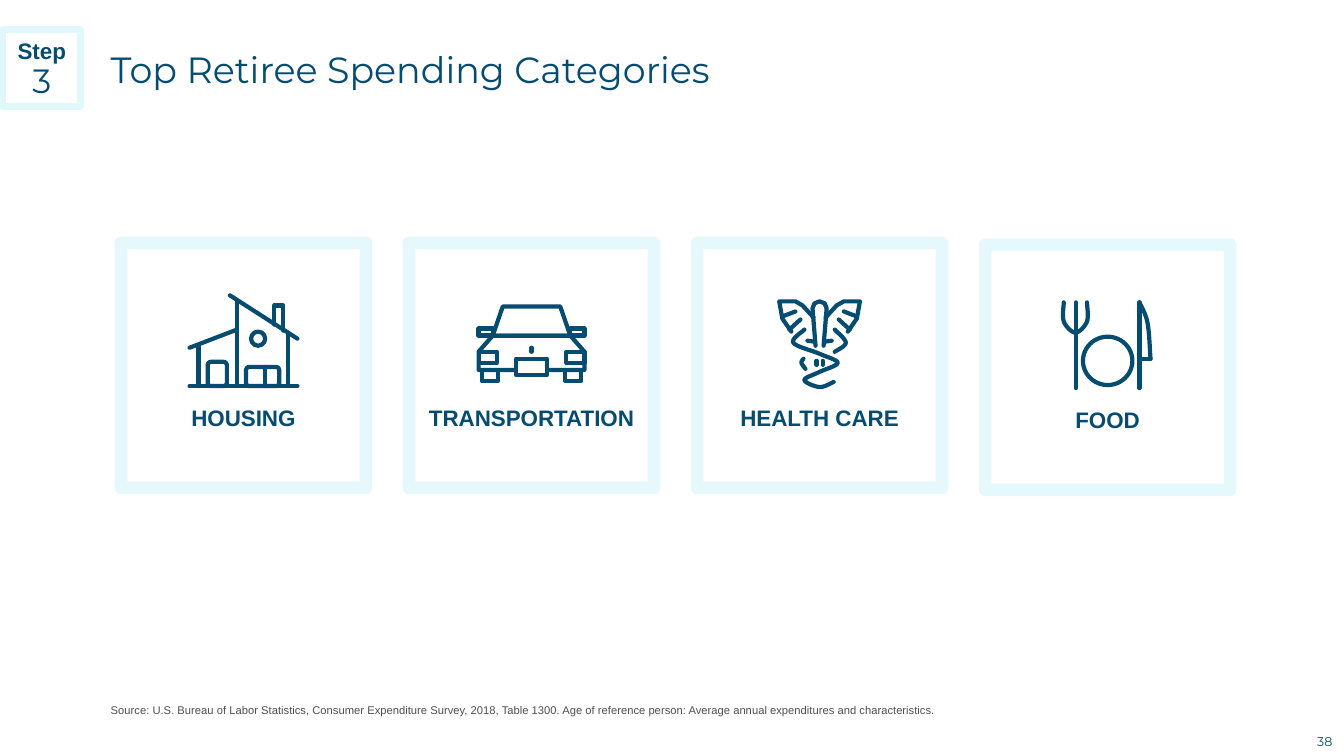
import lxml.etree
import pptx
import pptx.dml.color
import pptx.enum.shapes
import pptx.enum.text
import pptx.oxml.ns
import pptx.util

THEME = {
    "navy": "054C70", "cyan": "05C3DE", "pale": "E1F8FB", "white": "FFFFFF", "grey": "4F4F4F",
    "heading": "Montserrat", "body": "Arial",
    "title": 26, "step": 24, "label": 16, "number": 9, "source": 8,
    "stroke": 3, "frame": 9, "badge": 5,
}
GRID = pptx.util.Inches(0.01)  # one grid cell; all lengths below count cells
WIDTH, HEIGHT = 1333, 750
CARD, PITCH, CARDS_LEFT, CARDS_TOP = 243, 285.7, 120, 241
LABEL_DROP, LABEL_HEIGHT = 155, 37
BASE = 142  # where every icon stands, below the top of its card
CURVE_STEPS = 10

SHAPES = pptx.enum.shapes.MSO_SHAPE
ALIGN = pptx.enum.text.PP_ALIGN
ANCHOR = pptx.enum.text.MSO_ANCHOR
qn = pptx.oxml.ns.qn


def outline(shape, color, width):
    """Give a shape or connector a plain line with no shadow, and return the line element."""
    shape.line.color.rgb = pptx.dml.color.RGBColor.from_string(THEME[color])
    shape.line.width = pptx.util.Pt(THEME[width])
    properties = shape._element.spPr
    if properties.find(qn("a:effectLst")) is None:
        lxml.etree.SubElement(properties, qn("a:effectLst"))
    return properties.find(qn("a:ln"))


def write(shape, lines, insets, anchor, align):
    """Fill a shape with one paragraph per (text, font, size, bold, color)."""
    frame = shape.text_frame
    frame.word_wrap = True
    frame.vertical_anchor = anchor
    frame.margin_left, frame.margin_top, frame.margin_right, frame.margin_bottom = (
        inset * GRID for inset in insets)
    for index, (text, font, size, bold, color) in enumerate(lines):
        paragraph = frame.add_paragraph() if index else frame.paragraphs[0]
        paragraph.alignment = align
        run = paragraph.add_run()
        run.text = text
        run.font.name = THEME[font]
        run.font.size = pptx.util.Pt(THEME[size])
        run.font.bold = bold
        run.font.color.rgb = pptx.dml.color.RGBColor.from_string(THEME[color])
    return frame.paragraphs


# Icon strokes, measured from the top centre of their card.
# posts: (x, top) of uprights on the base; lines: polylines; curves: smooth through their points;
# pairs: polylines drawn on both sides; halves: polylines continued by their reflection.
ICONS = {
    "HOUSING": {
        "posts": [(-44.5, 101), (-6.5, 57), (21.5, 123), (44.5, 89)],
        "lines": [
            [(-53.5, BASE), (53.5, BASE)],
            [(-53.5, 104), (-6.5, 86)],
            [(-13.5, 52), (53.5, 95)],
            [(30.5, 81), (30.5, 62), (39.5, 62), (39.5, 87)],
        ],
        "shapes": [
            (SHAPES.ROUNDED_RECTANGLE, 2.5, 123, 33, 19),
            (SHAPES.ROUNDED_RECTANGLE, -35.5, 118, 19, 24),
            (SHAPES.OVAL, 7.5, 88, 14, 14),
        ],
    },
    "TRANSPORTATION": {
        "lines": [[(0, 104), (0, 108)]],
        "halves": [
            [(15.5, 126), (52.5, 126), (52.5, 108), (38.5, 92)],
            [(0, 63), (28.5, 63), (38.5, 92)],
        ],
        "shapes": [(SHAPES.RECTANGLE, -15.5, 115, 31, 16)],
        "paired shapes": [
            (SHAPES.RECTANGLE, -49.5, 126, 16, 11),
            (SHAPES.RECTANGLE, -52.5, 85, 14, 7),
            (SHAPES.RECTANGLE, -52.5, 108, 18, 11),
        ],
    },
    "HEALTH CARE": {
        "pairs": [
            [(37, 73), (24, 68)],
            [(30, 86), (19, 76)],
            [(5, 98), (12, 97)],
            [(3, 117), (3, 121)],
            [(28, 88), (37, 75), (40, 58), (24, 58), (17, 62), (6, 74)],
        ],
        "halves": [[(4, 102), (7, 65), (5, 60), (0, 58)]],
        "curves": [
            [(15, 86), (26, 99), (15, 108)],
            [(-15, 86), (-26, 99), (0, 110), (18, 119), (0, 128), (-15, 136), (0, 143), (14, 138)],
            [(-14, 125), (-18, 119), (-16, 115)],
        ],
    },
    "FOOD": {
        "drop": 2,
        "posts": [(-31.5, 57), (31.5, 57)],
        "lines": [[(31.5, 113), (42.5, 113)]],
        "curves": [
            [(31.5, 57), (39.5, 77), (42.5, 113)],
            [(-43.5, 57), (-43.5, 76), (-32, 87), (-20.5, 76), (-20.5, 57)],
        ],
        "shapes": [(SHAPES.OVAL, -24.5, 91, 49, 48)],
    },
}

presentation = pptx.Presentation()
presentation.slide_width = WIDTH * GRID
presentation.slide_height = HEIGHT * GRID
slide = presentation.slides.add_slide(presentation.slide_layouts[6])

# Title, source note and slide number
for box, line, insets, anchor, align in [
    ((100, 28, 1150, 81), ("Top Retiree Spending Categories", "heading", "title", False, "navy"),
     (10, 5, 10, 5), ANCHOR.MIDDLE, ALIGN.LEFT),
    ((100, 556, 1120, 155),
     ("Source: U.S. Bureau of Labor Statistics, Consumer Expenditure Survey, 2018, Table 1300. "
      "Age of reference person: Average annual expenditures and characteristics.",
      "body", "source", False, "grey"), (10, 0, 0, 0), ANCHOR.BOTTOM, ALIGN.LEFT),
    ((1297, 723, 34, 25), ("38", "heading", "number", False, "navy"),
     (0, 0, 0, 0), ANCHOR.MIDDLE, ALIGN.CENTER),
]:
    textbox = slide.shapes.add_textbox(*(length * GRID for length in box))
    write(textbox, [line], insets, anchor, align)

# Spending cards
for column, (label, icon) in enumerate(ICONS.items()):
    left = CARDS_LEFT + column * PITCH
    top = CARDS_TOP + icon.get("drop", 0)
    center = left + CARD / 2

    card = slide.shapes.add_shape(
        SHAPES.RECTANGLE, *(round(length * GRID) for length in (left, top, CARD, CARD)))
    card.fill.background()
    frame_color = outline(card, "cyan", "frame").find(".//" + qn("a:srgbClr"))
    lxml.etree.SubElement(frame_color, qn("a:alpha"), val="10000")

    polylines = icon.get("lines", []) + [[(x, y), (x, BASE)] for x, y in icon.get("posts", [])]
    for pair in icon.get("pairs", []):
        polylines += [pair, [(-x, y) for x, y in pair]]
    for half in icon.get("halves", []):
        polylines.append(half + [(-x, y) for x, y in reversed(half)])
    for knots in icon.get("curves", []):
        # Cubic through the knots, each slope taken from the neighbouring knots
        smooth = [knots[0]]
        padded = [knots[0], *knots, knots[-1]]
        for before, start, end, after in zip(padded, padded[1:], padded[2:], padded[3:]):
            for count in range(1, CURVE_STEPS + 1):
                t = count / CURVE_STEPS
                rise = t * t * (3 - 2 * t)
                smooth.append(tuple(
                    p + (q - p) * rise + t * (1 - t) * ((1 - t) * (q - o) - t * (r - p)) / 2
                    for o, p, q, r in zip(before, start, end, after)))
        polylines.append(smooth)

    group = slide.shapes.add_group_shape()
    strokes = []
    for points in polylines:
        places = [(round((center + x) * GRID), round((top + y) * GRID)) for x, y in points]
        if len(places) == 2:
            strokes.append(group.shapes.add_connector(
                pptx.enum.shapes.MSO_CONNECTOR.STRAIGHT, *places[0], *places[1]))
        else:
            builder = group.shapes.build_freeform(*places[0])
            builder.add_line_segments(places[1:], close=places[0] == places[-1])
            strokes.append(builder.convert_to_shape())
            strokes[-1].fill.background()

    paired = icon.get("paired shapes", [])
    reflected = [(kind, -x - width, y, width, height) for kind, x, y, width, height in paired]
    for kind, x, y, width, height in icon.get("shapes", []) + paired + reflected:
        part = group.shapes.add_shape(
            kind, *(round(length * GRID) for length in (center + x, top + y, width, height)))
        part.fill.background()
        strokes.append(part)
    for stroke in strokes:
        line = outline(stroke, "navy", "stroke")
        line.set("cap", "rnd")
        lxml.etree.SubElement(line, qn("a:round"))

    caption = slide.shapes.add_textbox(
        *(round(length * GRID) for length in (left, top + LABEL_DROP, CARD, LABEL_HEIGHT)))
    write(caption, [(label, "body", "label", True, "navy")], (10, 5, 10, 5), ANCHOR.TOP, ALIGN.CENTER)

# Step badge
badge = slide.shapes.add_shape(SHAPES.RECTANGLE, *(length * GRID for length in (3, 29, 77, 77)))
badge.fill.solid()
badge.fill.fore_color.rgb = pptx.dml.color.RGBColor.from_string(THEME["white"])
outline(badge, "pale", "badge")
badge_lines = [("Step", "body", "label", True, "navy"), ("3", "heading", "step", False, "navy")]
for paragraph in write(badge, badge_lines, (0, 5, 0, 0), ANCHOR.MIDDLE, ALIGN.CENTER):
    paragraph.line_spacing = 0.9

presentation.save("out.pptx")
